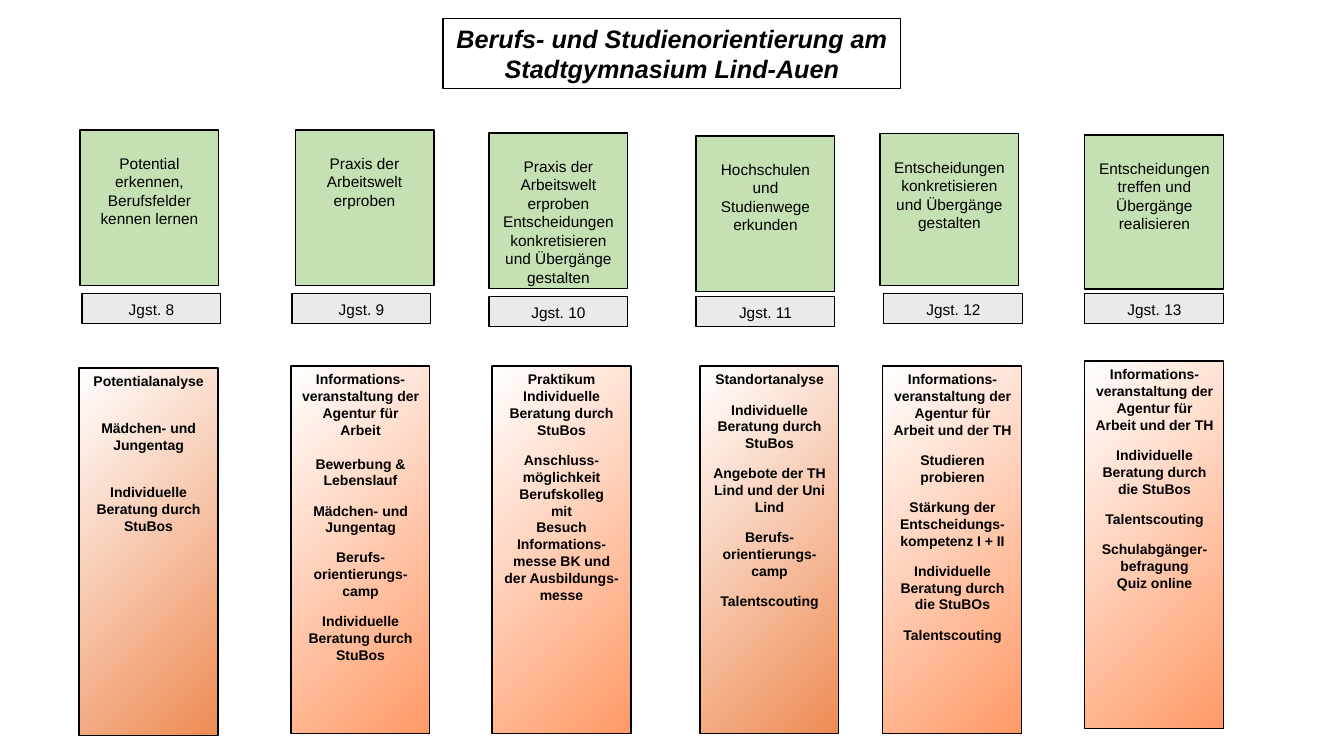
from pptx import Presentation
from pptx.dml.color import RGBColor
from pptx.enum.shapes import MSO_SHAPE as SHAPE
from pptx.enum.text import MSO_ANCHOR as ANCHOR, PP_ALIGN as ALIGN
from pptx.util import Emu, Pt

BLACK = RGBColor(0x00, 0x00, 0x00)
WHITE = RGBColor(0xFF, 0xFF, 0xFF)
GREEN = RGBColor(0xC5, 0xE0, 0xB3)
GREY = RGBColor(0xEA, 0xEA, 0xEA)
RUST = RGBColor(0xEE, 0x8B, 0x54)
ORANGE = RGBColor(0xFF, 0x99, 0x66)

# Space above a paragraph, in points
NONE, SMALL, MEDIUM, LARGE = 0, 9.5, 12, 21.5

TITLE = "Berufs- und Studienorientierung am Stadtgymnasium Lind-Auen"

# Boxes are (left, top) in px; the goal also has its height
COLUMNS = [
    dict(year=8, goal_at=(80, 130, 156), year_at=(82, 294), card_at=(79, 368), tint=RUST,
         goals=["Potential erkennen,", "Berufsfelder kennen lernen"],
         steps=[(NONE, "Potentialanalyse"),
                (LARGE, "Mädchen- und Jungentag"),
                (LARGE, "Individuelle Beratung durch StuBos")]),
    dict(year=9, goal_at=(295, 130, 156), year_at=(292, 294), card_at=(291, 366), tint=ORANGE,
         goals=["Praxis der Arbeitswelt erproben"],
         steps=[(NONE, "Informations-"),
                (NONE, "veranstaltung der Agentur für Arbeit"),
                (MEDIUM, "Bewerbung & Lebenslauf"),
                (SMALL, "Mädchen- und Jungentag"),
                (SMALL, "Berufs-orientierungs-camp"),
                (SMALL, "Individuelle Beratung durch StuBos")]),
    dict(year=10, goal_at=(489, 133, 156), year_at=(489, 297), card_at=(492, 366), tint=ORANGE,
         goals=["Praxis der Arbeitswelt erproben",
                "Entscheidungen konkretisieren und Übergänge gestalten"],
         steps=[(NONE, "Praktikum"),
                (NONE, "Individuelle Beratung durch StuBos"),
                (SMALL, "Anschluss-möglichkeit Berufskolleg"),
                (NONE, "mit"),
                (NONE, "Besuch Informations-messe BK und der Ausbildungs-"),
                (NONE, "messe")]),
    dict(year=11, goal_at=(696, 136, 156), year_at=(696, 297), card_at=(700, 366), tint=RUST,
         goals=["Hochschulen und Studienwege erkunden"],
         steps=[(NONE, "Standortanalyse"),
                (SMALL, "Individuelle Beratung durch StuBos"),
                (SMALL, "Angebote der TH Lind und der Uni Lind"),
                (SMALL, "Berufs-orientierungs-camp"),
                (SMALL, "Talentscouting")]),
    dict(year=12, goal_at=(880, 134, 152), year_at=(884, 294), card_at=(883, 366), tint=ORANGE,
         goals=["Entscheidungen konkretisieren und Übergänge gestalten"],
         steps=[(NONE, "Informations-"),
                (NONE, "veranstaltung der Agentur für Arbeit und der TH"),
                (SMALL, "Studieren probieren"),
                (SMALL, "Stärkung der Entscheidungs-kompetenz I + II"),
                (SMALL, "Individuelle Beratung durch die StuBOs"),
                (SMALL, "Talentscouting")]),
    dict(year=13, goal_at=(1085, 135, 154), year_at=(1085, 294), card_at=(1085, 361), tint=ORANGE,
         goals=["Entscheidungen treffen und Übergänge realisieren"],
         steps=[(NONE, "Informations-"),
                (NONE, "veranstaltung der Agentur für Arbeit und der TH"),
                (SMALL, "Individuelle Beratung durch die StuBos"),
                (SMALL, "Talentscouting"),
                (SMALL, "Schulabgänger-befragung"),
                (NONE, "Quiz online")]),
]
BOX_W, YEAR_H, CARD_H = 139, 30, 368
GOAL_TOP, GOAL_SIDE = 24, 11


def px(n):
    return Emu(round(n * 914400 / 100.8))


def add_box(slide, left, top, width, height, paragraphs, size, fill,
            bold=False, italic=False, anchor=ANCHOR.TOP):
    """Outlined box of centred text; paragraphs are (space above, text)."""
    s = slide.shapes.add_shape(SHAPE.RECTANGLE, px(left), px(top), px(width), px(height))
    s.shadow.inherit = False
    s.line.color.rgb = BLACK
    s.line.width = Pt(0.75)
    if isinstance(fill, RGBColor):
        s.fill.solid()
        s.fill.fore_color.rgb = fill
    else:
        s.fill.gradient()
        s.fill.gradient_angle = 315
        for stop, color in zip(s.fill.gradient_stops, fill):
            stop.color.rgb = color
    tf = s.text_frame
    tf.word_wrap = True
    tf.vertical_anchor = anchor
    for i, (space, text) in enumerate(paragraphs):
        p = tf.add_paragraph() if i else tf.paragraphs[0]
        p.text = text
        p.alignment = ALIGN.CENTER
        p.space_before = Pt(space)
        p.font.name = "Arial"
        p.font.size = Pt(size)
        p.font.bold = bold
        p.font.italic = italic
        p.font.color.rgb = BLACK
    return s


def main():
    prs = Presentation()
    prs.slide_width, prs.slide_height = px(1344), px(756)
    slide = prs.slides.add_slide(prs.slide_layouts[6])

    add_box(slide, 443, 18, 458, 71, [(NONE, TITLE)], 18, WHITE, bold=True, italic=True)
    for col in COLUMNS:
        left, top, height = col["goal_at"]
        goal = add_box(slide, left, top, BOX_W, height,
                       [(NONE, text) for text in col["goals"]], 11, GREEN)
        tf = goal.text_frame
        tf.margin_top = px(GOAL_TOP)
        tf.margin_left = tf.margin_right = px(GOAL_SIDE)
        tf.margin_bottom = 0
        add_box(slide, *col["year_at"], BOX_W, YEAR_H,
                [(NONE, f"Jgst. {col['year']}")], 11, GREY, anchor=ANCHOR.MIDDLE)
        add_box(slide, *col["card_at"], BOX_W, CARD_H, col["steps"], 10,
                (WHITE, col["tint"]), bold=True)

    prs.save("out.pptx")


if __name__ == "__main__":
    main()
